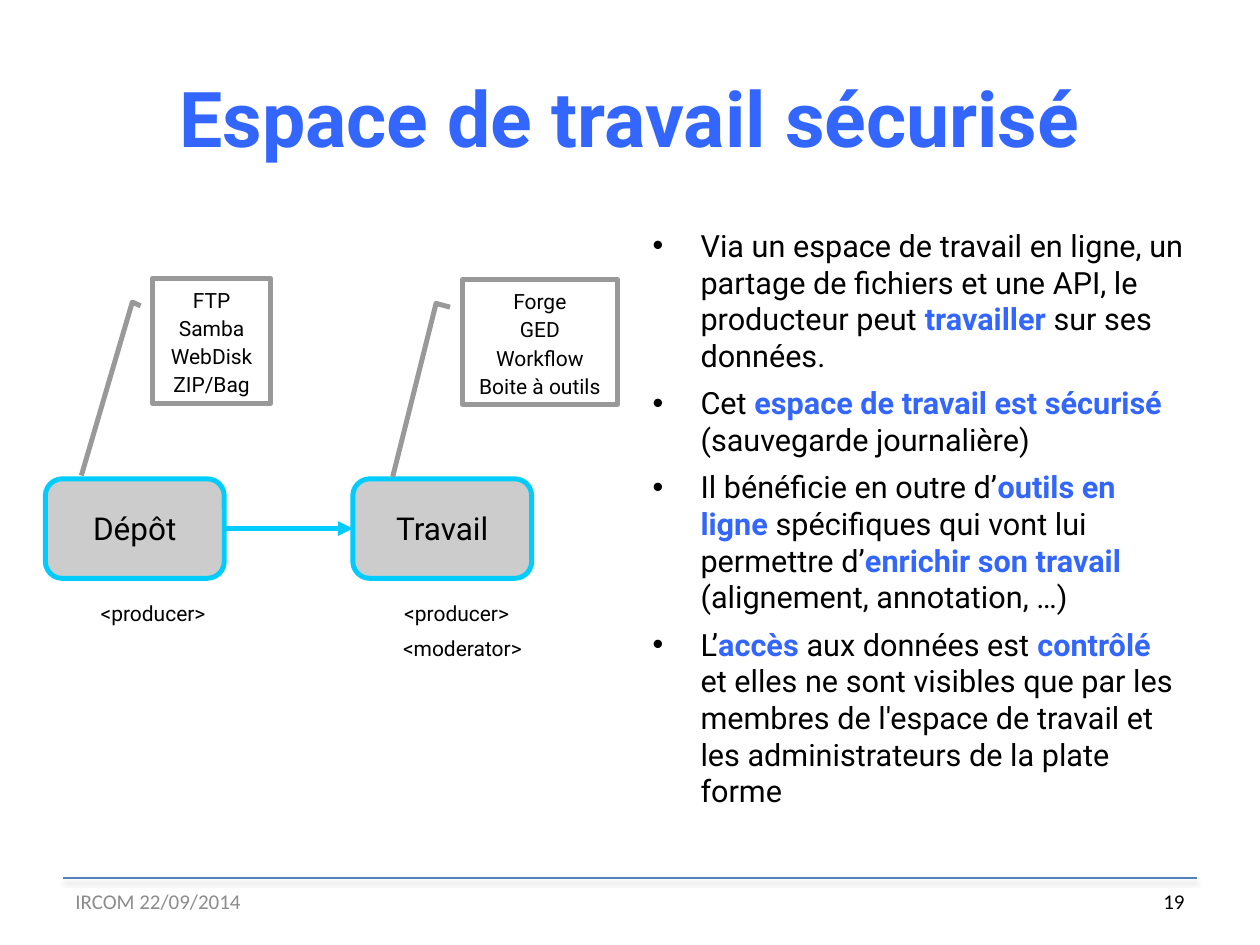
from lxml.etree import SubElement
from pptx import Presentation
from pptx.dml.color import RGBColor
from pptx.enum.shapes import MSO_CONNECTOR as Connector, MSO_SHAPE as Shape
from pptx.enum.text import MSO_ANCHOR as Anchor, MSO_AUTO_SIZE as AutoSize, PP_ALIGN as Align
from pptx.oxml.ns import qn
from pptx.util import Inches, Pt

BLUE = RGBColor(0x33, 0x66, 0xFF)
CYAN = RGBColor(0x00, 0xCC, 0xFF)
RULE = RGBColor(0x4F, 0x81, 0xBD)
BLACK = RGBColor(0, 0, 0)
WHITE = RGBColor(0xFF, 0xFF, 0xFF)
SILVER = RGBColor(0xCC, 0xCC, 0xCC)
GRAY = RGBColor(0x99, 0x99, 0x99)
FOOTER_GRAY = RGBColor(0x8C, 0x8C, 0x8C)


def write(frame, lines, size=12, font="Roboto", color=BLACK, bold=False, align=Align.LEFT,
          spacing=None, before=0, hanging=None, anchor=Anchor.TOP, wrap=True,
          insets=(0.1, 0.05, 0.1, 0.05)):
    """Fill a text frame with lines; parts between asterisks are emphasised."""
    frame.auto_size, frame.word_wrap = AutoSize.NONE, wrap
    frame.vertical_anchor = anchor
    frame.margin_left, frame.margin_top, frame.margin_right, frame.margin_bottom = map(Inches, insets)
    for number, line in enumerate(lines):
        paragraph = frame.add_paragraph() if number else frame.paragraphs[0]
        paragraph.alignment = align
        paragraph.space_before = Pt(before if number else 0)
        if spacing:
            paragraph.line_spacing = spacing
        if hanging:
            properties = paragraph._p.get_or_add_pPr()
            properties.set("marL", str(Inches(hanging)))
            properties.set("indent", str(-Inches(hanging)))
        for index, part in enumerate(line.split("*")):
            if part:
                emphasised = index % 2 == 1
                run = paragraph.add_run()
                run.text = part
                run.font.name, run.font.size = font, Pt(size)
                run.font.bold = bold or emphasised
                run.font.color.rgb = BLUE if emphasised else color


class SlideBuilder:
    """Style and current slide, measured on a grid of 100 columns by 75 rows."""

    stroke = 2.83

    def __init__(self, presentation):
        self.slide = presentation.slides.add_slide(presentation.slide_layouts[1])
        self.column = presentation.slide_width / 100
        self.row = presentation.slide_height / 75

    def place(self, left, top, width, height):
        return (round(left * self.column), round(top * self.row),
                round(width * self.column), round(height * self.row))

    def placeholder(self, index, area, lines, **style):
        shape = self.slide.placeholders[index]
        shape.left, shape.top, shape.width, shape.height = self.place(*area)
        write(shape.text_frame, lines, **style)

    def label(self, area, line, **style):
        box = self.slide.shapes.add_textbox(*self.place(*area))
        write(box.text_frame, [line], **style)

    def box(self, kind, area, lines, fill, outline, adjustments, **style):
        shape = self.slide.shapes.add_shape(kind, *self.place(*area))
        shape.shadow.inherit = False
        shape.fill.solid()
        shape.fill.fore_color.rgb = fill
        shape.line.color.rgb, shape.line.width = outline, Pt(self.stroke)
        for index, value in enumerate(adjustments):
            shape.adjustments[index] = value
        write(shape.text_frame, lines, align=Align.CENTER, anchor=Anchor.MIDDLE, wrap=False, **style)
        return shape

    def step(self, left, name):
        return self.box(Shape.ROUNDED_RECTANGLE, (left, 38, 14.2, 7.9), [name], SILVER, CYAN,
                        [0.17], size=18, spacing=0.93, insets=(0.12, 0.09, 0.12, 0.07))

    def callout(self, left, top, width, lines, start, end):
        self.box(Shape.LINE_CALLOUT_2, (left, top, width, 9.9), lines, WHITE, GRAY,
                 [0.22, start, 0.19, -0.17, 1.58, end], spacing=1.12,
                 insets=(0.12, 0.07, 0.12, 0.07))

    def line(self, start, end, color, width):
        points = self.place(*start, *end)
        connector = self.slide.shapes.add_connector(Connector.STRAIGHT, *points)
        connector.line.color.rgb, connector.line.width = color, Pt(width)
        return connector, SubElement(connector._element.spPr, qn("a:effectLst"))

    def arrow(self, source, target):
        connector, _ = self.line((0, 0), (1, 1), CYAN, self.stroke)
        connector.begin_connect(source, 3)
        connector.end_connect(target, 1)
        SubElement(connector.line._get_or_add_ln(), qn("a:tailEnd"), type="triangle")

    def footer_rule(self, start, end):
        _, effects = self.line(start, end, RULE, 1)
        shadow = SubElement(effects, qn("a:outerShdw"), blurRad="40000", dist="20000",
                            dir="5400000", rotWithShape="0")
        tint = SubElement(shadow, qn("a:srgbClr"), val=str(BLACK))
        SubElement(tint, qn("a:alpha"), val="38000")


def main():
    presentation = Presentation()
    presentation.slide_width, presentation.slide_height = Inches(10), Inches(7.5)
    builder = SlideBuilder(presentation)

    builder.footer_rule((5, 69.7), (95, 69.7))
    builder.placeholder(0, (5, 3, 90, 12.5), ["Espace de travail sécurisé"], size=44, color=BLUE,
                        bold=True, align=Align.CENTER, anchor=Anchor.MIDDLE)
    builder.placeholder(1, (50.8, 17.5, 44.2, 49.5), [
        "Via un espace de travail en ligne, un partage de fichiers et une API, "
        "le producteur peut *travailler *sur ses données.",
        "Cet *espace de travail est sécurisé *(sauvegarde journalière)",
        "Il bénéficie en outre d’*outils en ligne* spécifiques qui vont lui permettre "
        "d’*enrichir son travail *(alignement, annotation, …)",
        "L’*accès *aux données est *contrôlé *et elles ne sont visibles que par les membres "
        "de l'espace de travail et les administrateurs de la plate forme",
    ], size=17.5, before=6, hanging=0.38)
    builder.label((5, 69.5, 23.3, 4), "IRCOM 22/09/2014", font="Calibri", color=FOOTER_GRAY,
                  anchor=Anchor.MIDDLE)
    builder.label((71.7, 69.5, 23.3, 4), "19", font="Calibri", align=Align.RIGHT,
                  anchor=Anchor.MIDDLE)

    deposit = builder.step(3.6, "Dépôt")
    work = builder.step(28, "Travail")
    builder.arrow(deposit, work)
    builder.callout(12.1, 22.1, 9.4, ["FTP", "Samba", "WebDisk", "ZIP/Bag"], -0.1, -0.6)
    builder.callout(36.7, 22.2, 12.3, ["Forge", "GED", "Workflow", "Boite à outils"], -0.08, -0.45)

    for left, top, width, role in ((7, 46.9, 10.5, "<producer>"), (31.1, 46.9, 10.5, "<producer>"),
                                   (31, 49.7, 11.5, "<moderator>")):
        builder.label((left, top, width, 3.2), role, spacing=1.12, wrap=False)

    presentation.save("out.pptx")


if __name__ == "__main__":
    main()
